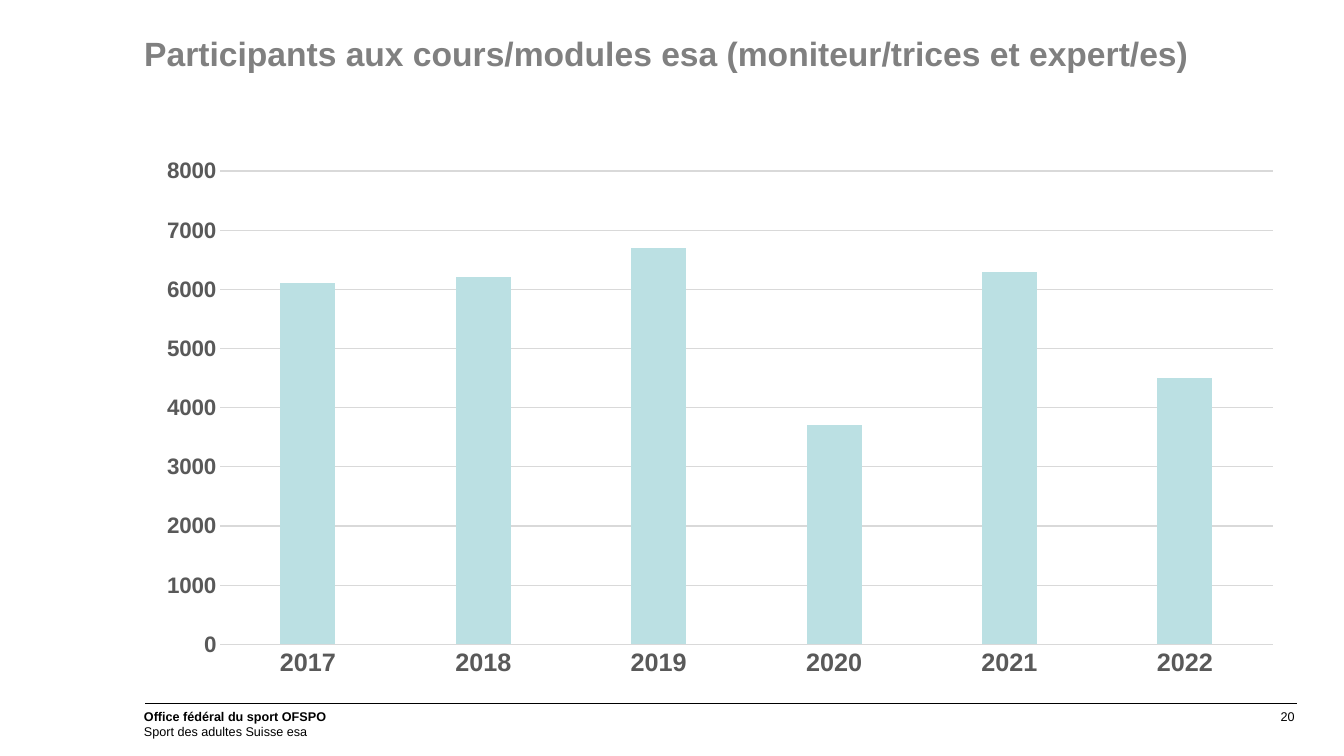
from dataclasses import dataclass

from lxml import etree
from pptx import Presentation
from pptx import util as u
from pptx.chart.data import CategoryChartData
from pptx.dml.color import RGBColor
from pptx.enum import chart as charts, shapes, text
from pptx.oxml import ns


@dataclass(frozen=True)
class Theme:
    font: str = "Arial"
    title_color: str = "808080"
    text_color: str = "000000"
    axis_color: str = "595959"
    grid_color: str = "D9D9D9"
    bar_color: str = "BBE0E3"
    title_size: float = 24
    footer_size: float = 9
    year_size: float = 18
    count_size: float = 16
    line_width: float = 0.75


class SlideBuilder:
    """Holds the theme and the current slide, and adds elements to it."""

    def __init__(self, slide, theme):
        self.slide = slide
        self.theme = theme

    def style_font(self, font, size, color, bold=False):
        font.name = self.theme.font
        font.size = u.Pt(size)
        font.bold = bold
        font.color.rgb = RGBColor.from_string(color)

    def style_line(self, line, color):
        line.color.rgb = RGBColor.from_string(color)
        line.width = u.Pt(self.theme.line_width)

    def add_text(self, box, lines, size, color, insets=(0, 0),
                 align=text.PP_ALIGN.LEFT, wrap=True):
        """Add (wording, bold) lines; insets are horizontal and vertical."""
        shape = self.slide.shapes.add_textbox(*map(u.Inches, box))
        frame = shape.text_frame
        frame.word_wrap = wrap
        frame.margin_left = frame.margin_right = u.Inches(insets[0])
        frame.margin_top = frame.margin_bottom = u.Inches(insets[1])
        for index, (wording, bold) in enumerate(lines):
            paragraph = frame.add_paragraph() if index else frame.paragraphs[0]
            paragraph.alignment = align
            run = paragraph.add_run()
            run.text = wording
            self.style_font(run.font, size, color, bold)

    def add_rule(self, left, right, top):
        connector = self.slide.shapes.add_connector(
            shapes.MSO_CONNECTOR.STRAIGHT,
            *map(u.Inches, (left, top, right, top)))
        self.style_line(connector.line, self.theme.text_color)
        properties = connector.element.find(ns.qn("p:spPr"))
        etree.SubElement(properties, ns.qn("a:effectLst"))

    def style_axis(self, axis, size):
        axis.major_tick_mark = charts.XL_TICK_MARK.NONE
        axis.minor_tick_mark = charts.XL_TICK_MARK.NONE
        self.style_font(axis.tick_labels.font, size, self.theme.axis_color, True)

    def add_column_chart(self, box, name, counts):
        data = CategoryChartData(number_format="General")
        data.categories = list(counts)
        data.add_series(name, counts.values())
        chart = self.slide.shapes.add_chart(
            charts.XL_CHART_TYPE.COLUMN_CLUSTERED,
            *map(u.Inches, box), data).chart
        chart.has_legend = False
        chart.has_title = False
        self.style_font(chart.font, 10, self.theme.text_color)

        plot = chart.plots[0]
        plot.gap_width = 219
        plot.overlap = -27
        plot.vary_by_categories = False
        fill = plot.series[0].format.fill
        fill.solid()
        fill.fore_color.rgb = RGBColor.from_string(self.theme.bar_color)

        self.style_axis(chart.category_axis, self.theme.year_size)
        self.style_line(chart.category_axis.format.line, self.theme.grid_color)
        value_axis = chart.value_axis
        self.style_axis(value_axis, self.theme.count_size)
        value_axis.minimum_scale = 0
        value_axis.maximum_scale = 8000
        value_axis.major_unit = 1000
        value_axis.format.line.fill.background()
        self.style_line(value_axis.major_gridlines.format.line,
                        self.theme.grid_color)


def main():
    presentation = Presentation()
    presentation.slide_width = u.Inches(13.33)
    presentation.slide_height = u.Inches(7.5)
    theme = Theme()
    builder = SlideBuilder(
        presentation.slides.add_slide(presentation.slide_layouts[6]), theme)

    builder.add_text((9.62, 7.03, 3.22, 0.16), [("20", False)],
                     theme.footer_size, theme.text_color,
                     align=text.PP_ALIGN.RIGHT)
    builder.add_rule(1.44, 12.86, 6.98)
    builder.add_text((1.33, 6.98, 5.7, 0.4),
                     [("Office fédéral du sport OFSPO", True),
                      ("Sport des adultes Suisse esa", False)],
                     theme.footer_size, theme.text_color, insets=(0.1, 0.05))
    builder.add_text(
        (1.43, 0.28, 11.42, 1.14),
        [("Participants aux cours/modules esa (moniteur/trices et expert/es)",
          True)],
        theme.title_size, theme.title_color, insets=(0, 0.05), wrap=False)
    builder.add_column_chart(
        (1.43, 1.47, 11.42, 5.35), "Participants",
        {"2017": 6100, "2018": 6200, "2019": 6700,
         "2020": 3700, "2021": 6300, "2022": 4500})

    presentation.save("out.pptx")


if __name__ == "__main__":
    main()
